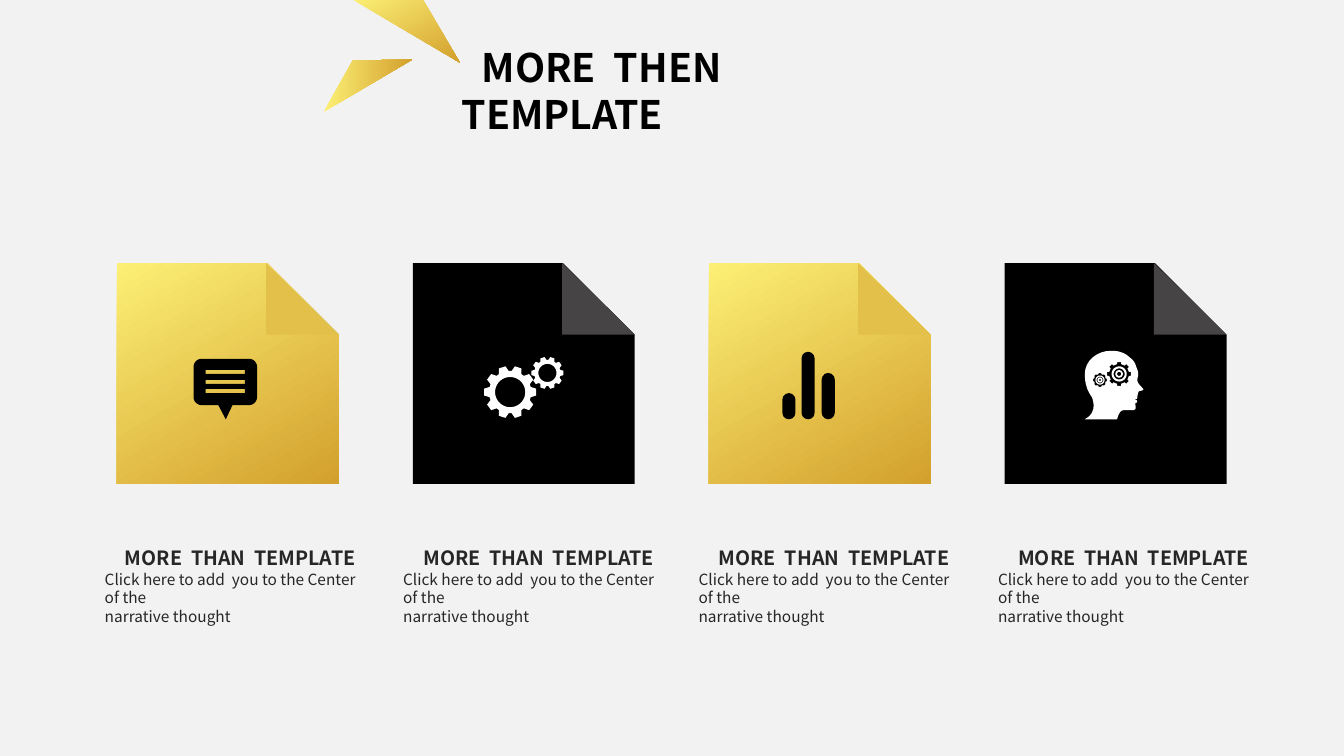
import math
from dataclasses import dataclass
from typing import Any

import pptx
import pptx.dml.color
import pptx.enum.shapes
import pptx.enum.text
import pptx.util

Point = tuple[float, float]
Contour = list[Point]
Inches = pptx.util.Inches

COLORS = {
    "background": "F2F2F2", "light gold": "FCEF75", "dark gold": "D3A02D",
    "gold fold": "E3C04A", "black": "000000", "gray fold": "464444",
    "white": "FFFFFF", "text": "262626",
}
FONT = "Noto Sans CJK JP"
HEADING = "MORE  THAN  TEMPLATE"
BODY = ["Click here to add  you to the Center of the", "narrative thought"]
SHEET_LEFT, SHEET_TOP, SHEET_PITCH = 1.16, 2.61, 2.935
SHEET = [(0, 0), (1.49, 0), (2.2, 0.71), (2.2, 2.19), (0, 2.19)]
FOLD = [(1.48, 0), (2.2, 0.71), (1.48, 0.71)]


@dataclass
class Card:
    fill: str
    fold: str
    text_left: float


@dataclass
class Gear:
    x: float
    y: float
    tip: float
    root: float
    teeth: int
    tip_angle: float
    root_angle: float


@dataclass
class Ring:
    x: float
    y: float
    outer: float
    inner: float


@dataclass
class Bar:
    left: float
    top: float


CARDS = [
    Card("gold", "gold fold", 0.94), Card("black", "gray fold", 3.9),
    Card("gold", "gold fold", 6.83), Card("black", "gray fold", 9.8),
]
LARGE_GEAR = Gear(5.06, 3.89, 0.26, 0.21, 10, 7.6, 14)
SMALL_GEAR = Gear(5.43, 3.7, 0.16, 0.13, 10, 7.6, 14)
HEAD_GEARS = [
    Gear(11.1, 3.71, 0.12, 0.1, 8, 9.5, 11),
    Gear(10.91, 3.77, 0.07, 0.06, 8, 12, 13),
]
HEAD_RINGS = [
    Ring(11.1, 3.71, 0.075, 0.055), Ring(11.1, 3.71, 0.037, 0.02),
    Ring(10.91, 3.77, 0.045, 0.033), Ring(10.91, 3.77, 0.025, 0.01),
]
BARS = [Bar(7.76, 3.9), Bar(7.95, 3.49), Bar(8.15, 3.7)]
BAR_BOTTOM, BAR_WIDTH = 4.16, 0.13
HEAD_START = (11.33, 3.85)
HEAD_CURVES = [
    ((11.32, 3.83), (11.3, 3.82), (11.29, 3.8)),
    ((11.27, 3.77), (11.29, 3.74), (11.29, 3.71)),
    ((11.29, 3.69), (11.28, 3.66), (11.27, 3.64)),
    ((11.26, 3.6), (11.24, 3.57), (11.21, 3.55)),
    ((11.16, 3.5), (11.1, 3.48), (11.02, 3.48)),
    ((10.88, 3.48), (10.76, 3.58), (10.76, 3.71)),
    ((10.76, 3.8), (10.78, 3.87), (10.83, 3.94)),
    ((10.83, 3.94), (10.9, 4.09), (10.76, 4.16)),
    ((10.86, 4.16), (10.97, 4.16), (11.08, 4.16)),
    ((11.08, 4.16), (11.1, 4.07), (11.14, 4.07)),
    ((11.17, 4.07), (11.21, 4.07), (11.24, 4.07)),
    ((11.28, 4.06), (11.26, 4.03), (11.26, 4)),
    ((11.27, 4), (11.28, 3.99), (11.28, 3.98)),
    ((11.28, 3.97), (11.27, 3.97), (11.25, 3.96)),
    ((11.27, 3.96), (11.28, 3.96), (11.28, 3.95)),
    ((11.28, 3.93), (11.29, 3.88), (11.3, 3.88)),
    ((11.37, 3.87), (11.33, 3.85), (11.33, 3.85)),
]


def polar(x: float, y: float, radius: float, degrees: float) -> Point:
    angle = math.radians(degrees)
    return x + radius * math.cos(angle), y + radius * math.sin(angle)


def circle(x: float, y: float, radius: float) -> Contour:
    return [polar(x, y, radius, d) for d in range(360, 0, -10)]


def gear_outline(gear: Gear) -> Contour:
    profile = [(gear.root, -gear.root_angle), (gear.tip, -gear.tip_angle),
               (gear.tip, gear.tip_angle), (gear.root, gear.root_angle)]
    return [polar(gear.x, gear.y, radius, 360 * tooth / gear.teeth + offset)
            for tooth in range(gear.teeth) for radius, offset in profile]


def rectangle(left: float, top: float, right: float, bottom: float) -> Contour:
    return [(left, top), (left, bottom), (right, bottom), (right, top)]


def rounded(left: float, top: float, right: float, bottom: float, radius: float) -> Contour:
    corners = [(right - radius, bottom - radius), (left + radius, bottom - radius),
               (left + radius, top + radius), (right - radius, top + radius)]
    return [polar(x, y, radius, 90 * i + d)
            for i, (x, y) in enumerate(corners) for d in range(0, 91, 15)]


def curved(start: Point, curves: list[tuple[Point, Point, Point]]) -> Contour:
    points = [start]
    for a, b, end in curves:
        first = points[-1]
        for t in (i / 8 for i in range(1, 9)):
            weights = ((1 - t) ** 3, 3 * t * (1 - t) ** 2, 3 * t * t * (1 - t), t ** 3)
            x, y = (sum(w * c for w, c in zip(weights, axis))
                    for axis in zip(first, a, b, end))
            points.append((x, y))
    return points


def rgb(name: str) -> Any:
    return pptx.dml.color.RGBColor.from_string(COLORS[name])


def paint(sp: Any, fill: str, angle: float = 300) -> None:
    sp.shadow.inherit = False
    sp.line.fill.background()
    if fill != "gold":
        sp.fill.solid()
        sp.fill.fore_color.rgb = rgb(fill)
        return
    sp.fill.gradient()
    sp.fill.gradient_angle = angle
    for stop, name in zip(sp.fill.gradient_stops, ("light gold", "dark gold")):
        stop.color.rgb = rgb(name)


def draw(shapes: Any, fill: str, *contours: Contour, angle: float = 300) -> None:
    outlines = [[(Inches(x), Inches(y)) for x, y in c] for c in contours]
    builder = shapes.build_freeform(*outlines[0][0])
    for i, outline in enumerate(outlines):
        if i:
            builder.move_to(*outline[0])
        builder.add_line_segments(outline[1:], close=True)
    paint(builder.convert_to_shape(), fill, angle)


def add_text(shapes: Any, box: tuple[float, float, float, float], inset: float,
             heading: str, size: float, color: str, body: list[str]) -> None:
    tf = shapes.add_textbox(*map(Inches, box)).text_frame
    tf.word_wrap = True
    tf.auto_size = pptx.enum.text.MSO_AUTO_SIZE.NONE
    tf.margin_top = Inches(inset)
    for i, line in enumerate([heading, *body]):
        p = tf.add_paragraph() if i else tf.paragraphs[0]
        p.text = line
        p.font.name = FONT
        p.font.size = pptx.util.Pt(11 if i else size)
        p.font.bold = i == 0
        p.font.color.rgb = rgb(color)
        if i == 0:
            p._p.get_or_add_pPr().set("indent", str(Inches(0.2)))


def main() -> None:
    prs = pptx.Presentation()
    prs.slide_width, prs.slide_height = Inches(13.33), Inches(7.5)
    s = prs.slides.add_slide(prs.slide_layouts[6])
    s.background.fill.solid()
    s.background.fill.fore_color.rgb = rgb("background")

    draw(s.shapes, "gold", [(3.49, -0.01), (4.19, -0.01), (4.56, 0.62)])
    draw(s.shapes, "gold", [(3.21, 1.11), (3.5, 0.6), (4.09, 0.59)], angle=0)
    add_text(s.shapes, (4.48, 0.32, 4.38, 0.64), 0.11, "MORE  THEN  TEMPLATE", 28, "black", [])

    for i, card in enumerate(CARDS):
        left = SHEET_LEFT + i * SHEET_PITCH
        for fill, outline in ((card.fill, SHEET), (card.fold, FOLD)):
            draw(s.shapes, fill, [(left + x, SHEET_TOP + y) for x, y in outline])

    gears = s.shapes.add_group_shape().shapes
    for gear, hole in ((LARGE_GEAR, 0.15), (SMALL_GEAR, 0.09)):
        draw(gears, "white", gear_outline(gear), circle(gear.x, gear.y, hole))

    chat = s.shapes.add_group_shape().shapes
    draw(chat, "black", [(2.15, 3.99), (2.32, 3.99), (2.24, 4.16)])
    slots = [rectangle(2.04, top, 2.43, top + 0.04) for top in (3.67, 3.77, 3.86)]
    draw(chat, "black", rounded(1.92, 3.56, 2.55, 4.02, 0.08), *slots)

    bars = s.shapes.add_group_shape().shapes
    for bar in BARS:
        sp = bars.add_shape(pptx.enum.shapes.MSO_SHAPE.ROUNDED_RECTANGLE, Inches(bar.left),
                            Inches(bar.top), Inches(BAR_WIDTH), Inches(BAR_BOTTOM - bar.top))
        sp.adjustments[0] = 0.5
        paint(sp, "black")

    head = s.shapes.add_group_shape().shapes
    draw(head, "white", curved(HEAD_START, HEAD_CURVES), *map(gear_outline, HEAD_GEARS))
    for ring in HEAD_RINGS:
        draw(head, "white", circle(ring.x, ring.y, ring.outer), circle(ring.x, ring.y, ring.inner))

    for card in CARDS:
        add_text(s.shapes, (card.text_left, 5.34, 2.79, 1.11), 0.08, HEADING, 14, "text", BODY)
    prs.save("out.pptx")


if __name__ == "__main__":
    main()
